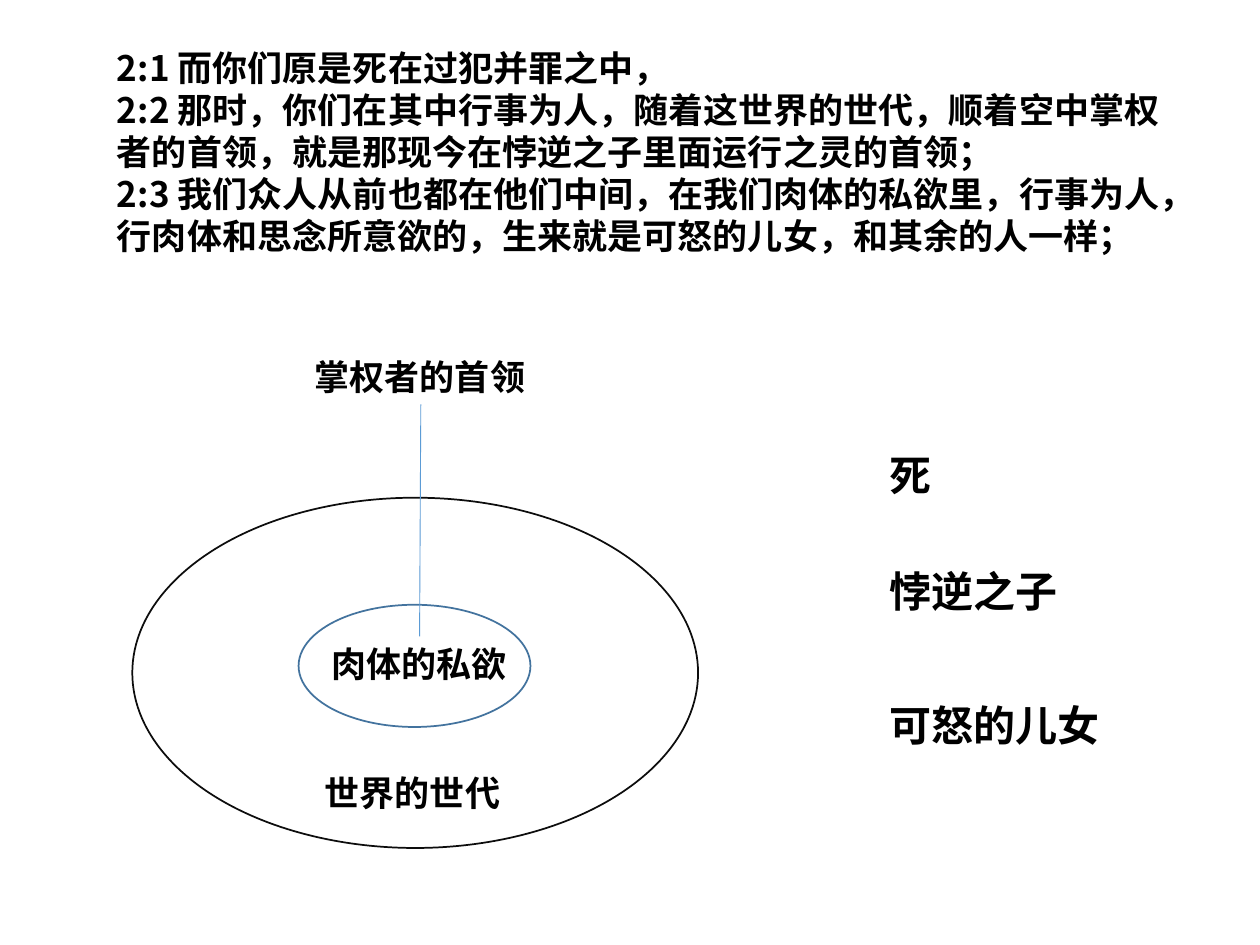
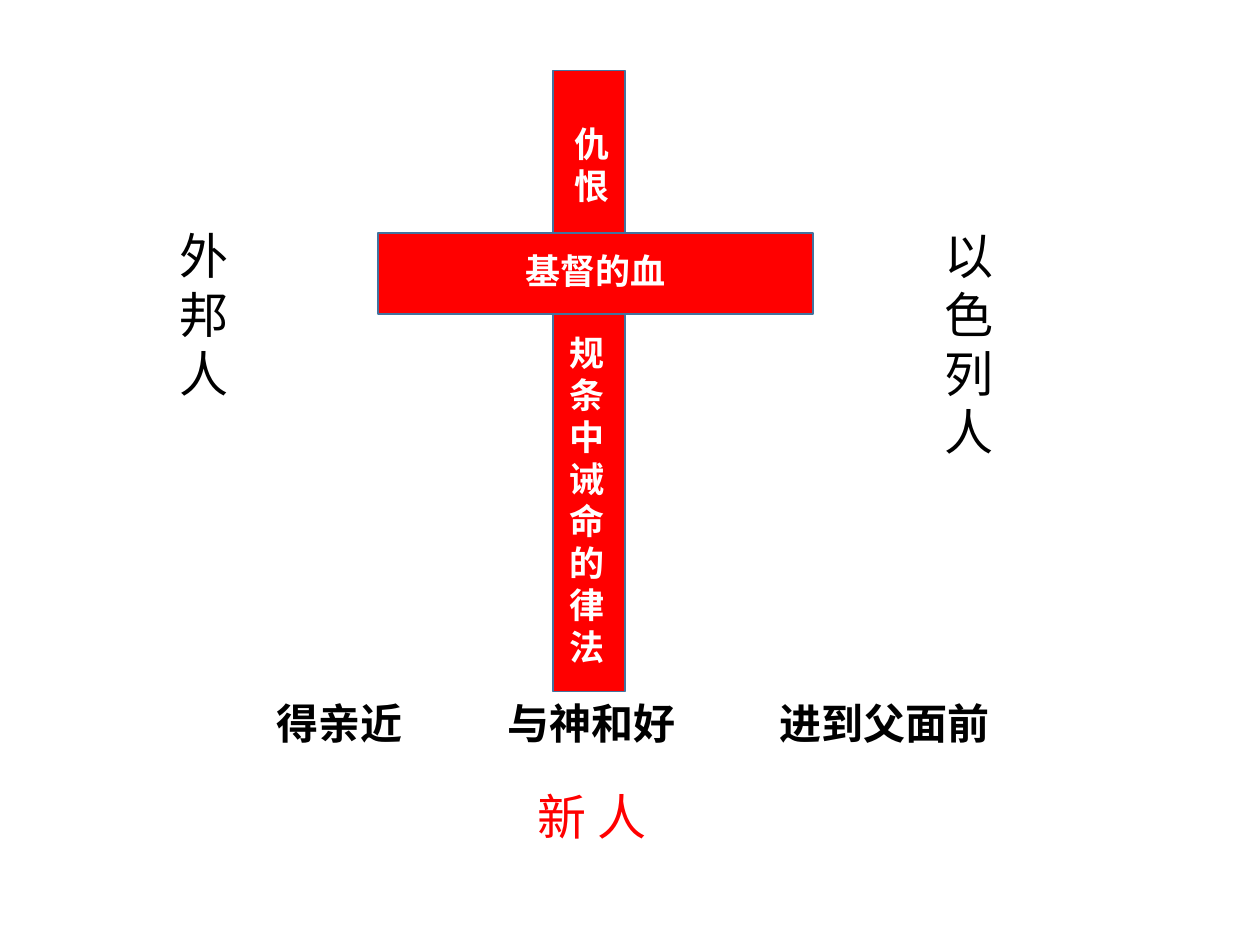
from lxml import etree
from pptx import Presentation
from pptx.dml.color import RGBColor
from pptx.enum.shapes import MSO_CONNECTOR, MSO_SHAPE
from pptx.enum.text import MSO_AUTO_SIZE
from pptx.oxml.ns import qn
from pptx.util import Inches, Pt

OVAL, RECTANGLE = MSO_SHAPE.OVAL, MSO_SHAPE.RECTANGLE
STRAIGHT = MSO_CONNECTOR.STRAIGHT
FIT_SHAPE = MSO_AUTO_SIZE.SHAPE_TO_FIT_TEXT
BOTTOM, TOP = 2, 0

COLORS = {
    "text": "000000",
    "light": "FFFFFF",
    "red": "FF0000",
    "outline": "43739E",
    "world": "0D0D0D",
    "link": "5B9BD5",
}
LATIN_FONT, CHINESE_FONT = "Calibri", "Noto Sans CJK SC"

VERSES = [
    "2:1 而你们原是死在过犯并罪之中，",
    "2:2 那时，你们在其中行事为人，随着这世界的世代，顺着空中掌权者的首领，"
    "就是那现今在悖逆之子里面运行之灵的首领；",
    "2:3 我们众人从前也都在他们中间，在我们肉体的私欲里，行事为人，"
    "行肉体和思念所意欲的，生来就是可怒的儿女，和其余的人一样；",
]


def rgb(name):
    return RGBColor.from_string(COLORS[name])


def add_text(page, box, lines, size=20, color="text", bold=True,
             font=LATIN_FONT, wrap=True):
    """Add a text box with one paragraph for each line."""
    label = page.shapes.add_textbox(*map(Inches, box))
    frame = label.text_frame
    frame.word_wrap = wrap
    frame.auto_size = FIT_SHAPE
    frame.text = "\n".join(lines)
    for para in frame.paragraphs:
        para.font.size = Pt(size)
        para.font.bold = bold
        para.font.name = font
        para.font.color.rgb = rgb(color)
        # Chinese characters take the East Asian font
        defaults = para._p.pPr.find(qn("a:defRPr"))
        etree.SubElement(defaults, qn("a:ea"), typeface=CHINESE_FONT)
    return label


def add_figure(page, kind, box, line, fill=None):
    figure = page.shapes.add_shape(kind, *map(Inches, box))
    figure.shadow.inherit = False
    if fill:
        figure.fill.solid()
        figure.fill.fore_color.rgb = rgb(fill)
    else:
        figure.fill.background()
    figure.line.color.rgb = rgb(line)
    figure.line.width = Pt(1)
    return figure


def add_link(page, upper, lower):
    """Join the bottom of one label to the top of another."""
    link = page.shapes.add_connector(STRAIGHT, 0, 0, 0, 0)
    link.begin_connect(upper, BOTTOM)
    link.end_connect(lower, TOP)
    link.line.color.rgb = rgb("link")
    link.line.width = Pt(0.5)
    etree.SubElement(link._element.spPr, qn("a:effectLst"))


def draw_world(page, left, top):
    """Nested ovals: the flesh inside the world, under its ruler."""
    add_figure(page, OVAL, (left, top, 4.49, 2.78), "world")
    ruler = add_text(page, (left + 1.35, top - 1.18, 1.88, 0.44),
                     ["掌权者的首领"], wrap=False)
    add_text(page, (left + 1.43, top + 2.12, 1.6, 0.44),
             ["世界的世代"], wrap=False)
    flesh = add_text(page, (left + 1.48, top + 1.1, 1.6, 0.44),
                     ["肉体的私欲"], wrap=False)
    add_figure(page, OVAL, (left + 1.32, top + 0.85, 1.84, 0.97), "outline")
    add_link(page, ruler, flesh)


def draw_conditions(page, left):
    for text, top, width in (("死", 3.52, 0.53), ("悖逆之子", 4.44, 1.54),
                             ("可怒的儿女", 5.5, 1.87)):
        add_text(page, (left, top, width, 0.5), [text], size=24, wrap=False)


def draw_cross(page, left, top):
    """A post and a beam, each carrying white words."""
    for box in ((left + 1.39, top, 0.57, 4.93),
                (left, top + 1.29, 3.45, 0.64)):
        add_figure(page, RECTANGLE, box, "outline", "red")
    add_text(page, (left + 1.46, top + 0.36, 0.42, 0.77), ["仇恨"],
             color="light")
    add_text(page, (left + 1.07, top + 1.37, 1.32, 0.44), ["基督的血"],
             color="light", wrap=False)
    add_text(page, (left + 1.42, top + 2.02, 0.56, 2.79),
             ["规条中诫命的律法"], color="light")


def draw_peoples(page):
    """The two peoples beside the cross and the new man below it."""
    for text, box, color in (
        ("外邦人", (1.33, 1.74, 0.59, 1.51), "text"),
        ("以色列人", (7.4, 1.74, 0.74, 1.98), "text"),
        ("新 人", (4.17, 6.19, 1.32, 0.57), "red"),
    ):
        add_text(page, box, [text], size=28, color=color, bold=False,
                 font=CHINESE_FONT)


def draw_results(page, top):
    for text, left, width in (("得亲近", 2.1, 1.24), ("与神和好", 3.93, 1.56),
                              ("进到父面前", 6.09, 2.05)):
        add_text(page, (left, top, width, 0.5), [text], size=24)


def main():
    deck = Presentation()
    deck.slide_width, deck.slide_height = Inches(10), Inches(7.5)
    blank = deck.slide_layouts[6]

    # Slide 1: verses and the fallen state
    page = deck.slides.add_slide(blank)
    add_text(page, (0.83, 0.32, 8.59, 1.78), VERSES, font=CHINESE_FONT)
    draw_world(page, 1.05, 3.95)
    draw_conditions(page, 6.96)

    # Slide 2: the cross and the new man
    page = deck.slides.add_slide(blank)
    draw_cross(page, 3, 0.56)
    draw_peoples(page)
    draw_results(page, 5.49)

    deck.save("out.pptx")


if __name__ == "__main__":
    main()
